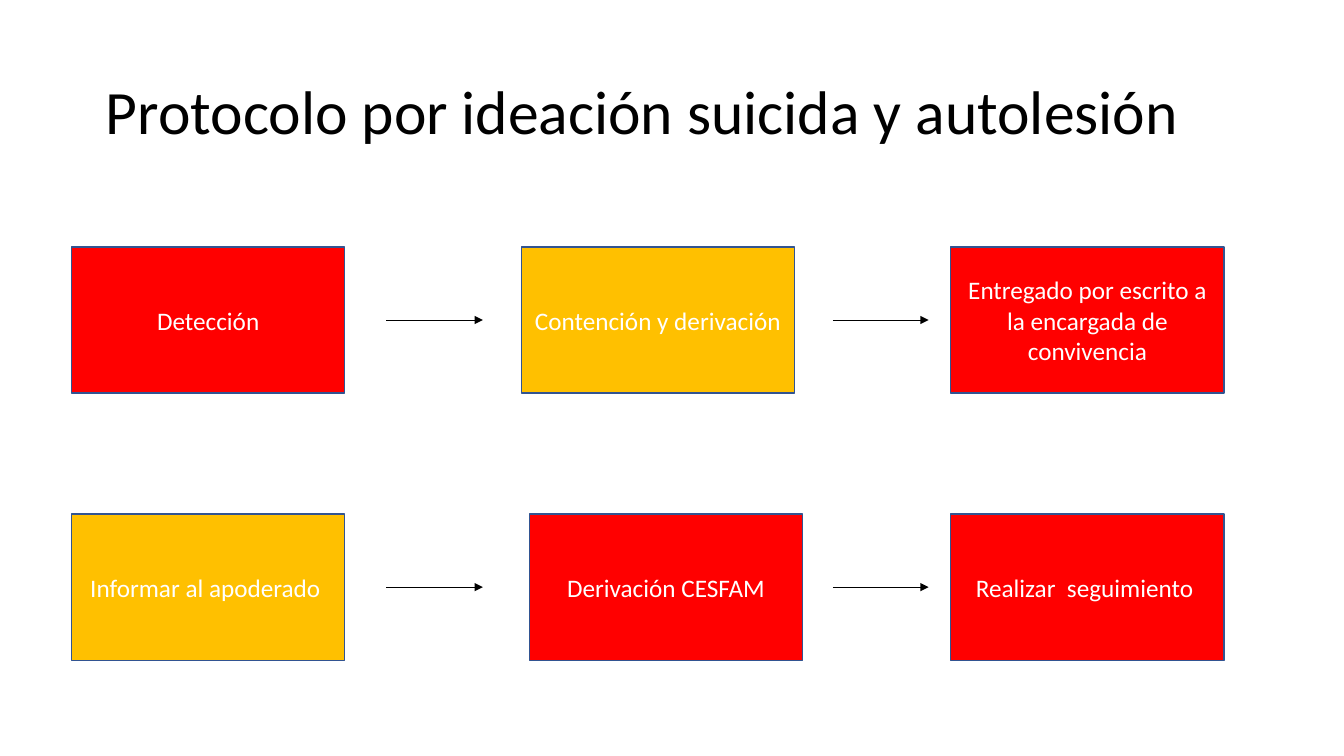
from lxml import etree
from pptx import Presentation
from pptx.dml.color import RGBColor
from pptx.enum.shapes import MSO_CONNECTOR, MSO_SHAPE
from pptx.enum.text import MSO_ANCHOR, PP_ALIGN
from pptx.oxml.ns import qn
from pptx.util import Inches, Pt

RECTANGLE = MSO_SHAPE.RECTANGLE
STRAIGHT = MSO_CONNECTOR.STRAIGHT
MIDDLE = MSO_ANCHOR.MIDDLE
LEFT = PP_ALIGN.LEFT
CENTER = PP_ALIGN.CENTER

FONT = "Calibri"
BLACK = "000000"
WHITE = "FFFFFF"
RED = "FF0000"
AMBER = "FFC000"
BORDER = "325491"

TITLE_ONLY = 5
STEP_WIDTH, STEP_HEIGHT = 2.71, 1.45
ARROW_SPANS = [(3.83, 4.79), (8.26, 9.21)]
ROWS = [
    (2.45, [
        (0.71, RED, "Detección"),
        (5.17, AMBER, "Contención y derivación"),
        (9.43, RED, "Entregado por escrito a la encargada de convivencia"),
    ]),
    (5.1, [
        (0.71, AMBER, "Informar al apoderado "),
        (5.25, RED, "Derivación CESFAM"),
        (9.43, RED, "Realizar  seguimiento "),
    ]),
]


def rgb(hex_code):
    return RGBColor.from_string(hex_code)


def write(frame, text, size, color, alignment):
    frame.word_wrap = True
    frame.vertical_anchor = MIDDLE
    paragraph = frame.paragraphs[0]
    paragraph.alignment = alignment
    run = paragraph.add_run()
    run.text = text
    run.font.name = FONT
    run.font.size = Pt(size)
    run.font.color.rgb = rgb(color)
    return paragraph


def set_title(slide, text):
    title = slide.shapes.title
    title.left, title.top = Inches(0.95), Inches(0.41)
    title.width, title.height = Inches(11.5), Inches(1.45)
    write(title.text_frame, text, 44, BLACK, LEFT).line_spacing = 0.9


def add_step(slide, left, top, fill, text):
    step = slide.shapes.add_shape(
        RECTANGLE, Inches(left), Inches(top), Inches(STEP_WIDTH), Inches(STEP_HEIGHT))
    step.shadow.inherit = False
    step.fill.solid()
    step.fill.fore_color.rgb = rgb(fill)
    step.line.color.rgb = rgb(BORDER)
    step.line.width = Pt(1)
    write(step.text_frame, text, 18, WHITE, CENTER)


def add_arrow(slide, start, end, y):
    arrow = slide.shapes.add_connector(
        STRAIGHT, Inches(start), Inches(y), Inches(end), Inches(y))
    arrow.line.color.rgb = rgb(BLACK)
    arrow.line.width = Pt(0.5)
    etree.SubElement(arrow.line._get_or_add_ln(), qn("a:tailEnd"), type="triangle")
    etree.SubElement(arrow._element.spPr, qn("a:effectLst"))


def main():
    deck = Presentation()
    deck.slide_width, deck.slide_height = Inches(13.33), Inches(7.5)
    slide = deck.slides.add_slide(deck.slide_layouts[TITLE_ONLY])
    set_title(slide, "Protocolo por ideación suicida y autolesión")
    for top, steps in ROWS:
        for left, fill, text in steps:
            add_step(slide, left, top, fill, text)
        for start, end in ARROW_SPANS:
            add_arrow(slide, start, end, top + STEP_HEIGHT / 2)
    deck.save("out.pptx")


if __name__ == "__main__":
    main()
